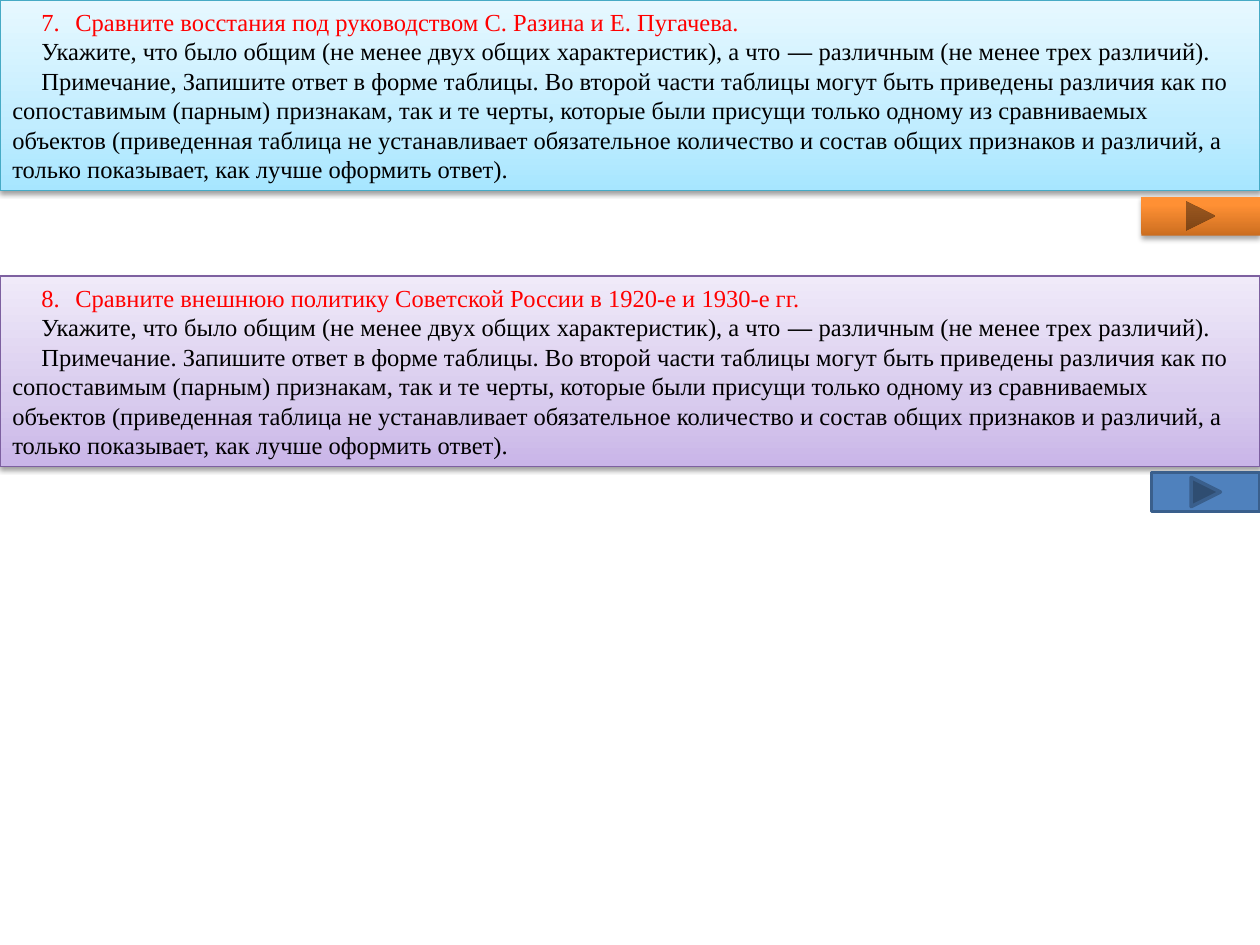
from lxml import etree
from pptx import Presentation
from pptx import util as u
from pptx.dml.color import RGBColor
from pptx.enum import shapes, text
from pptx.oxml.ns import qn

HUES = {
    "red": "FF0000", "black": "000000",
    "aqua": "46AAC5", "plum": "7D60A0",
    "blue": "4F81BD", "navy": "3A5F8C",
}
BLENDS = {
    "aqua": [(0, "A7E6FF"), (35, "C1EDFF"), (100, "E7F8FF")],
    "plum": [(0, "C9B5E8"), (35, "D8CBEE"), (100, "F0EAF9")],
    "gold": [(0, "CC6E20"), (80, "FF9034"), (100, "FF9136")],
}
MAIN, DASH = "Times New Roman", "TeX Gyre Schola"


def blend(shape, stops):
    """Fill the shape with stops that run from bottom to top."""
    shape.fill.gradient()
    shape.fill.gradient_angle = 90
    group = shape._element.spPr.find(qn("a:gradFill")).find(qn("a:gsLst"))
    for old in list(group):
        group.remove(old)
    for place, hue in stops:
        stop = etree.SubElement(group, qn("a:gs"), pos=str(place * 1000))
        etree.SubElement(stop, qn("a:srgbClr"), val=hue)


def shade(shape, alpha, dist):
    """Drop a soft shadow straight below the shape."""
    effects = shape._element.spPr.find(qn("a:effectLst"))
    drop = etree.SubElement(
        effects, qn("a:outerShdw"), blurRad=str(u.Pt(3.1)),
        dist=str(u.Pt(dist)), dir="5400000", rotWithShape="0")
    hue = etree.SubElement(drop, qn("a:srgbClr"), val=HUES["black"])
    etree.SubElement(hue, qn("a:alpha"), val=str(alpha * 1000))


deck = Presentation()
deck.slide_width, deck.slide_height = u.Inches(10), u.Inches(7.5)
slide = deck.slides.add_slide(deck.slide_layouts[6])

# Task panels: top, colour, heading, sign after the word "Примечание"
tasks = [
    (0, "aqua", "7.\tСравните восстания под руководством С. Разина и Е. Пугачева.", ","),
    (2.19, "plum", "8.\tСравните внешнюю политику Советской России в 1920-е и 1930-е гг.", "."),
]
for top, hue, head, sign in tasks:
    panel = slide.shapes.add_shape(
        shapes.MSO_SHAPE.RECTANGLE, 0, u.Inches(top), u.Inches(10), u.Inches(1.51))
    panel.shadow.inherit = False
    blend(panel, BLENDS[hue])
    panel.line.color.rgb = RGBColor.from_string(HUES[hue])
    panel.line.width = u.Pt(0.75)
    shade(panel, 38, 1.6)

    frame = panel.text_frame
    frame.word_wrap = True
    frame.auto_size = text.MSO_AUTO_SIZE.SHAPE_TO_FIT_TEXT
    frame.vertical_anchor = text.MSO_ANCHOR.MIDDLE
    paras = [
        [(head, MAIN, "red")],
        [("Укажите, что было общим (не менее двух общих характеристик), а что ", MAIN, "black"),
         ("—", DASH, "black"),
         (" различным (не менее трех различий).", MAIN, "black")],
        [(f"Примечание{sign} Запишите ответ в форме таблицы. Во второй части таблицы "
          "могут быть приведены различия как по сопоставимым (парным) признакам, так и "
          "те черты, которые были присущи только одному из сравниваемых объектов "
          "(приведенная таблица не устанавливает обязательное количество и состав общих "
          "признаков и различий, а только показывает, как лучше оформить ответ).",
          MAIN, "black")],
    ]
    for row, runs in enumerate(paras):
        para = frame.paragraphs[0] if row == 0 else frame.add_paragraph()
        para.alignment = text.PP_ALIGN.LEFT
        props = para._p.get_or_add_pPr()
        props.set("indent", str(u.Inches(0.23)))
        if row == 0:
            tabs = etree.SubElement(props, qn("a:tabLst"))
            etree.SubElement(tabs, qn("a:tab"), pos=str(u.Inches(0.52)), algn="l")
        for words, face, tint in runs:
            run = para.add_run()
            run.text = words
            run.font.size = u.Pt(14)
            run.font.name = face
            run.font.color.rgb = RGBColor.from_string(HUES[tint])

# Forward buttons, flush with the right edge
for top, width, hue in [(1.56, 0.94, "gold"), (3.75, 0.86, "blue")]:
    button = slide.shapes.add_shape(
        shapes.MSO_SHAPE.ACTION_BUTTON_FORWARD_OR_NEXT,
        u.Inches(10 - width), u.Inches(top), u.Inches(width), u.Inches(0.31))
    button.shadow.inherit = False
    if hue in BLENDS:
        blend(button, BLENDS[hue])
        button.line.fill.background()
        shade(button, 35, 1.8)
    else:
        button.fill.solid()
        button.fill.fore_color.rgb = RGBColor.from_string(HUES[hue])
        button.line.color.rgb = RGBColor.from_string(HUES["navy"])
        button.line.width = u.Pt(2)

deck.save("out.pptx")
